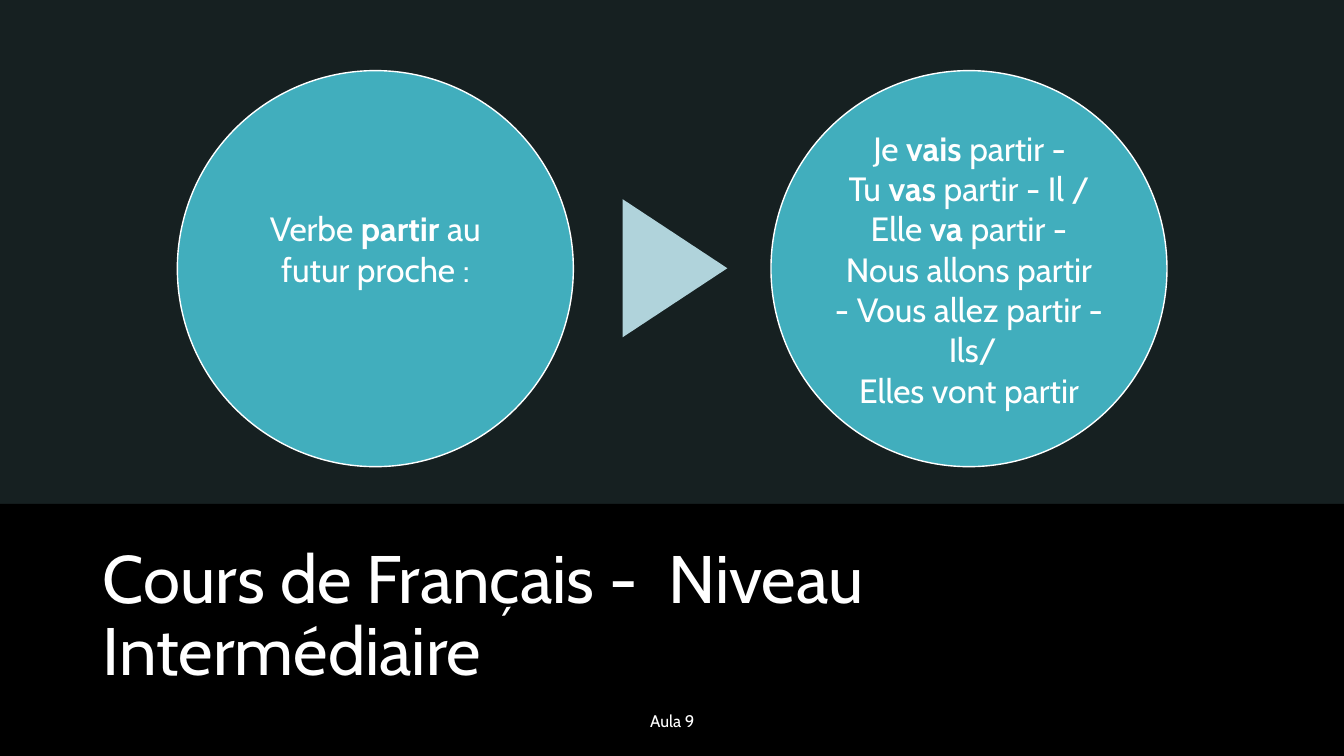
from dataclasses import dataclass

from lxml import etree
from pptx import Presentation
from pptx.dml.color import RGBColor
from pptx.enum import shapes, text
from pptx.oxml import ns
from pptx.util import Cm, Pt


@dataclass(frozen=True)
class Theme:
    font: str = "Cabin"
    black: str = "000000"
    white: str = "FFFFFF"
    tint: str = "94D7E4"
    teal: str = "41AEBD"
    pale: str = "B0D3DB"
    title_size: int = 48
    verb_size: int = 24
    lesson_size: int = 12


theme = Theme()


def add_filled(kind, left, top, width, height, color):
    shape = slide.shapes.add_shape(kind, Cm(left), Cm(top), Cm(width), Cm(height))
    shape.shadow.inherit = False
    shape.fill.solid()
    shape.fill.fore_color.rgb = RGBColor.from_string(color)
    shape.line.fill.background()
    return shape


def add_run(paragraph, wording, size, bold=False):
    run = paragraph.add_run()
    run.text = wording
    style = {"name": theme.font, "size": Pt(size), "bold": bold}
    for attribute, value in style.items():
        setattr(run.font, attribute, value)
    run.font.color.rgb = RGBColor.from_string(theme.white)


deck = Presentation()
deck.slide_width, deck.slide_height = Cm(33.87), Cm(19.05)
slide = deck.slides.add_slide(deck.slide_layouts[5])
slide.background.fill.solid()
slide.background.fill.fore_color.rgb = RGBColor.from_string(theme.black)

# Upper panel and title band
panel = add_filled(shapes.MSO_SHAPE.RECTANGLE, 0, 0, 33.87, 12.7, theme.tint)
tint = panel.fill._xPr.find(".//" + ns.qn("a:srgbClr"))
etree.SubElement(tint, ns.qn("a:alpha"), val="15000")
add_filled(shapes.MSO_SHAPE.RECTANGLE, 0, 12.7, 33.87, 6.35, theme.black)

# Title, brought in front of its band
title = slide.shapes.title
slide.shapes._spTree.append(title._element)
title.left, title.top, title.width, title.height = Cm(2.34), Cm(13.61), Cm(29.21), Cm(3.56)
frame = title.text_frame
frame.auto_size = text.MSO_AUTO_SIZE.NONE
frame.vertical_anchor = text.MSO_ANCHOR.TOP
heading = frame.paragraphs[0]
heading.alignment = text.PP_ALIGN.LEFT
heading.line_spacing = 0.9
add_run(heading, "Cours de Français -  Niveau Intermédiaire", theme.title_size)

# Lesson number
lesson = slide.shapes.add_textbox(Cm(11.23), Cm(17.65), Cm(11.43), Cm(1.02)).text_frame
lesson.word_wrap = True
lesson.vertical_anchor = text.MSO_ANCHOR.MIDDLE
lesson.paragraphs[0].alignment = text.PP_ALIGN.CENTER
add_run(lesson.paragraphs[0], "Aula 9", theme.lesson_size)

# Verb circles: * switches bold, ~ is a no-break space
diameter, circle_top = 9.98, 1.78
inset, text_line = 0.08, 1.02
circles = [
    (4.47, inset + text_line, "Verbe*~partir*~au futur proche~:"),
    (19.43, inset,
     "Je~*vais*~partir~-Tu~*vas*~partir~-~Il / Elle~*va*~partir~-~Nous~allons~partir"
     "~-~Vous~allez~partir~-~Ils/ Elles~vont~partir"),
]
for left, bottom_inset, wording in circles:
    circle = add_filled(shapes.MSO_SHAPE.OVAL, left, circle_top, diameter, diameter, theme.teal)
    circle.line.color.rgb = RGBColor.from_string(theme.white)
    circle.line.width = Pt(1)
    frame = circle.text_frame
    layout = {
        "word_wrap": True,
        "vertical_anchor": text.MSO_ANCHOR.MIDDLE,
        "margin_left": Cm(inset),
        "margin_right": Cm(inset),
        "margin_top": Cm(inset),
        "margin_bottom": Cm(bottom_inset),
    }
    for attribute, value in layout.items():
        setattr(frame, attribute, value)
    frame.paragraphs[0].alignment = text.PP_ALIGN.CENTER
    for index, part in enumerate(wording.replace("~", chr(160)).split("*")):
        add_run(frame.paragraphs[0], part, theme.verb_size, bold=index % 2 == 1)

# Pointer from the verb to its forms
pointer = add_filled(shapes.MSO_SHAPE.ISOSCELES_TRIANGLE, 15.27, 5.44, 3.48, 2.64, theme.pale)
pointer.rotation = 90

deck.save("out.pptx")
